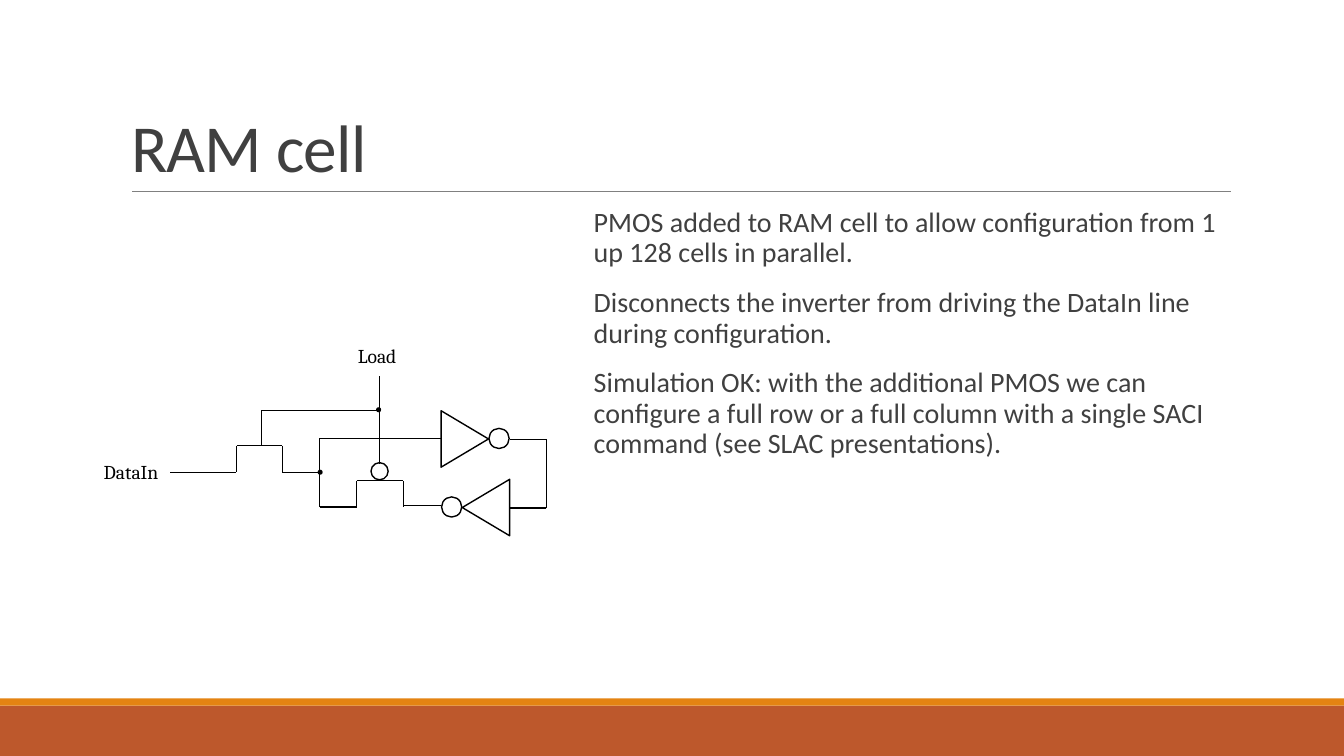
from pptx import Presentation
from pptx.dml.color import RGBColor
from pptx.enum.shapes import MSO_CONNECTOR, MSO_SHAPE
from pptx.enum.text import MSO_ANCHOR, MSO_AUTO_SIZE, PP_ALIGN
from pptx.oxml.ns import qn
from pptx.util import Inches, Pt

INK = {"text": "404040", "rule": "808080", "wire": "000000",
       "rust": "BD582C", "amber": "E48312"}


def add_line(x1, y1, x2, y2, ink="wire", width=0.75):
    line = slide.shapes.add_connector(
        MSO_CONNECTOR.STRAIGHT, Inches(x1), Inches(y1), Inches(x2), Inches(y2))
    line.line.color.rgb = RGBColor.from_string(INK[ink])
    line.line.width = Pt(width)
    props = line._element.spPr
    props.append(props.makeelement(qn("a:effectLst"), {}))


def add_part(kind, box, fill=None, turn=0):
    part = slide.shapes.add_shape(kind, *map(Inches, box))
    part.shadow.inherit = False
    part.rotation = turn
    if fill:
        part.fill.solid()
        part.fill.fore_color.rgb = RGBColor.from_string(INK[fill])
        part.line.fill.background()
    else:
        part.fill.background()
        part.line.color.rgb = RGBColor.from_string(INK["wire"])
        part.line.width = Pt(1)


deck = Presentation()
deck.slide_width, deck.slide_height = Inches(13.33), Inches(7.5)
slide = deck.slides.add_slide(deck.slide_layouts[5])

# Footer bands and title rule
add_part(MSO_SHAPE.RECTANGLE, (0, 7, 13.33, 0.5), "rust")
add_part(MSO_SHAPE.RECTANGLE, (0, 6.93, 13.33, 0.07), "amber")
add_line(1.31, 1.9, 12.21, 1.9, "rule", 0.5)

# Title
title = slide.shapes.title
place = {"left": 1.2, "top": 0.31, "width": 11, "height": 1.59}
for name, value in place.items():
    setattr(title, name, Inches(value))
frame = title.text_frame
frame.text = "RAM cell"
frame.vertical_anchor = MSO_ANCHOR.BOTTOM
frame.auto_size = MSO_AUTO_SIZE.NONE
head = frame.paragraphs[0]
head.alignment = PP_ALIGN.LEFT
head.line_spacing = 0.85
font = head.runs[0].font
font.name, font.size = "Calibri", Pt(48)
font.color.rgb = RGBColor.from_string(INK["text"])
font._element.set("spc", "-50")

# Body text
notes = [
    "PMOS added to RAM cell to allow configuration from 1 up 128 cells in parallel.",
    "Disconnects the inverter from driving the DataIn line during configuration.",
    "Simulation OK: with the additional PMOS we can configure a full row or a full "
    "column with a single SACI command (see SLAC presentations).",
]
body = slide.shapes.add_textbox(Inches(5.79), Inches(2.02), Inches(6.41), Inches(4.4))
frame = body.text_frame
frame.word_wrap = True
frame.margin_left, frame.margin_right = Inches(0.1), 0
for i, note in enumerate(notes):
    para = frame.paragraphs[0] if i == 0 else frame.add_paragraph()
    para.text = note
    style = {"line_spacing": 0.9, "space_before": Pt(12 if i else 0),
             "space_after": Pt(2)}
    for name, value in style.items():
        setattr(para, name, value)
    para.font.name, para.font.size = "Calibri", Pt(20)
    para.font.color.rgb = RGBColor.from_string(INK["text"])

# Inverters, PMOS gate bubble and junction dots
for box, turn in [((4.54, 4.8, 0.56, 0.47), 270), ((4.33, 4.12, 0.56, 0.47), 90)]:
    add_part(MSO_SHAPE.ISOSCELES_TRIANGLE, box, turn=turn)
for x, y, size, fill in [(4.38, 4.93, 0.2, None), (4.85, 4.25, 0.2, None),
                         (3.68, 4.59, 0.17, None),
                         (3.73, 4.04, 0.05, "wire"), (3.15, 4.66, 0.05, "wire")]:
    add_part(MSO_SHAPE.OVAL, (x, y, size, size), fill)

# Transistor channels: a top bar with two legs
for left, right, top in [(2.35, 2.8, 4.42), (3.54, 4, 4.77)]:
    add_line(left, top, right, top)
    for x in (left, right):
        add_line(x, top, x, top + 0.26)

# Wires
wires = [
    (5.42, 5.04, 5.42, 4.36), (5.42, 4.36, 5.06, 4.36), (5.42, 5.04, 5.06, 5.04),
    (3.17, 5.03, 3.17, 4.35), (3.17, 4.35, 4.38, 4.35), (4, 5.02, 4.37, 5.02),
    (3.76, 4.6, 3.76, 3.73), (2.8, 4.69, 3.18, 4.69), (3.17, 5.03, 3.54, 5.03),
    (2.34, 4.69, 1.69, 4.69), (3.76, 4.07, 2.59, 4.07), (2.59, 4.42, 2.59, 4.07),
]
for wire in wires:
    add_line(*wire)

# Signal names
for name, x, y, width in [("Load", 3.45, 3.36, 0.62), ("DataIn", 0.93, 4.51, 0.76)]:
    label = slide.shapes.add_textbox(Inches(x), Inches(y), Inches(width), Inches(0.34))
    label.text_frame.word_wrap = False
    label.text_frame.auto_size = MSO_AUTO_SIZE.SHAPE_TO_FIT_TEXT
    para = label.text_frame.paragraphs[0]
    para.text = name
    para.font.name, para.font.size = "Cambria", Pt(14)
    para.font.color.rgb = RGBColor.from_string(INK["wire"])

deck.save("out.pptx")
